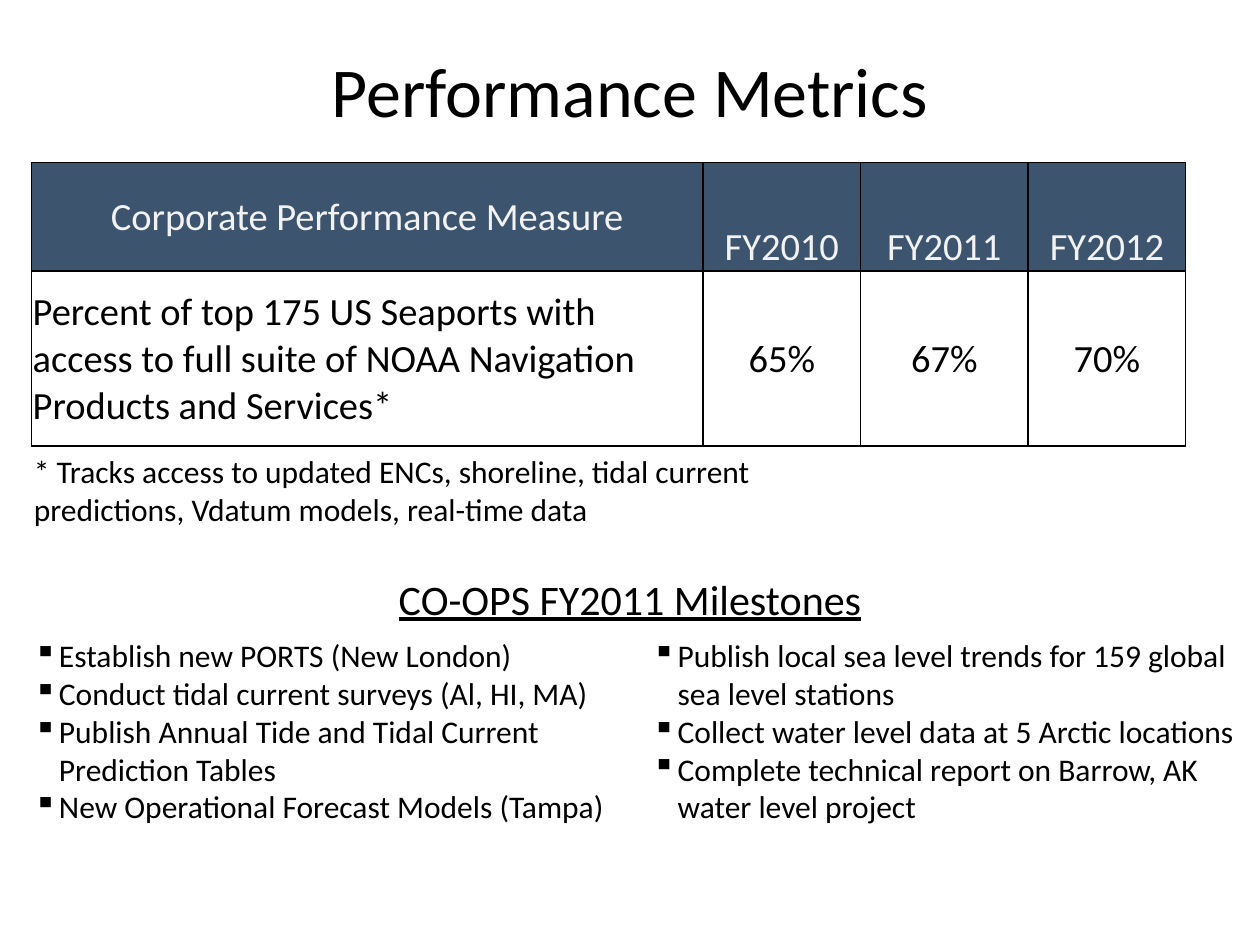
from lxml.etree import SubElement
from pptx import Presentation
from pptx.dml.color import RGBColor
from pptx.enum.text import MSO_ANCHOR, PP_ALIGN
from pptx.oxml.ns import qn
from pptx.util import Inches, Pt

BLACK = RGBColor(0x00, 0x00, 0x00)
PALE_GRAY = RGBColor(0xF2, 0xF2, 0xF2)
NAVY = RGBColor(0x3D, 0x54, 0x6F)
BULLET_INDENT = Inches(0.2)


def write(text_frame, lines, size, color=BLACK, align=PP_ALIGN.LEFT, bullet=None, underline=None):
    """Fill a text frame with one paragraph per line, all in the same style."""
    text_frame.word_wrap = True
    text_frame.text = "\n".join(lines)
    for paragraph in text_frame.paragraphs:
        paragraph.alignment = align
        if bullet:
            properties = paragraph._p.get_or_add_pPr()
            properties.set("marL", str(BULLET_INDENT))
            properties.set("indent", str(-BULLET_INDENT))
            SubElement(properties, qn("a:buChar"), char=bullet)
        font = paragraph.font
        font.name, font.size, font.color.rgb = "Calibri", Pt(size), color
        font.underline = underline


def add_borders(cell):
    """Draw a thin black line on each side of a table cell."""
    properties = cell._tc.get_or_add_tcPr()
    for position, side in enumerate(("lnL", "lnR", "lnT", "lnB")):
        line = SubElement(properties, qn(f"a:{side}"), w=str(Pt(1)))
        fill = SubElement(line, qn("a:solidFill"))
        SubElement(fill, qn("a:srgbClr"), val=str(BLACK))
        properties.remove(line)
        properties.insert(position, line)


presentation = Presentation()
presentation.slide_width, presentation.slide_height = Inches(10), Inches(7.5)
slide = presentation.slides.add_slide(presentation.slide_layouts[6])
shapes = slide.shapes

# Title
title = shapes.add_textbox(Inches(0.75), Inches(0.25), Inches(8.5), Inches(0.92))
title.text_frame.vertical_anchor = MSO_ANCHOR.MIDDLE
write(title.text_frame, ["Performance Metrics"], 40, align=PP_ALIGN.CENTER)

# Performance table
rows = [
    ["Corporate Performance Measure", "FY2010", "FY2011", "FY2012"],
    ["Percent of top 175 US Seaports with access to full suite of NOAA Navigation "
     "Products and Services*", "65%", "67%", "70%"],
]
column_widths = [5.33, 1.25, 1.33, 1.25]
row_heights = [0.86, 1.39]
table = shapes.add_table(
    len(rows), len(column_widths), Inches(0.25), Inches(1.29),
    Inches(sum(column_widths)), Inches(sum(row_heights)),
).table
for column, width in zip(table.columns, column_widths):
    column.width = Inches(width)
for row, height in zip(table.rows, row_heights):
    row.height = Inches(height)

for row_index, values in enumerate(rows):
    is_header = row_index == 0
    for column_index, value in enumerate(values):
        is_measure = column_index == 0
        cell = table.cell(row_index, column_index)
        cell.margin_left = cell.margin_right = cell.margin_top = Inches(0.01)
        cell.margin_bottom = 0
        cell.vertical_anchor = MSO_ANCHOR.BOTTOM if is_header and not is_measure else MSO_ANCHOR.MIDDLE
        if is_header:
            cell.fill.solid()
            cell.fill.fore_color.rgb = NAVY
        else:
            cell.fill.background()
        write(cell.text_frame, [value], 22, PALE_GRAY if is_header else BLACK,
              PP_ALIGN.LEFT if is_measure and not is_header else PP_ALIGN.CENTER)
        cell.text_frame.paragraphs[0].font.bold = False
        add_borders(cell)

# Footnote
footnote = shapes.add_textbox(Inches(0.17), Inches(3.54), Inches(6.08), Inches(0.71))
write(footnote.text_frame, ["* Tracks access to updated ENCs, shoreline, tidal current "
                            "predictions, Vdatum models, real-time data"], 18)

# Milestones
heading = shapes.add_textbox(Inches(2.04), Inches(4.5), Inches(5.92), Inches(0.51))
write(heading.text_frame, ["CO-OPS FY2011 Milestones"], 24, align=PP_ALIGN.CENTER, underline=True)

milestone_columns = [
    (0.17, 5, [
        "Establish new PORTS (New London)",
        "Conduct tidal current surveys (Al, HI, MA)",
        "Publish Annual Tide and Tidal Current Prediction Tables",
        "New Operational Forecast Models (Tampa)",
    ]),
    (5.08, 5.08, [
        "Publish local sea level trends for 159 global sea level stations",
        "Collect water level data at 5 Arctic locations",
        "Complete technical report on Barrow, AK water level project",
    ]),
]
for left, width, milestones in milestone_columns:
    column_box = shapes.add_textbox(Inches(left), Inches(5), Inches(width), Inches(1.92))
    write(column_box.text_frame, milestones, 18, bullet="▪")

presentation.save("out.pptx")
